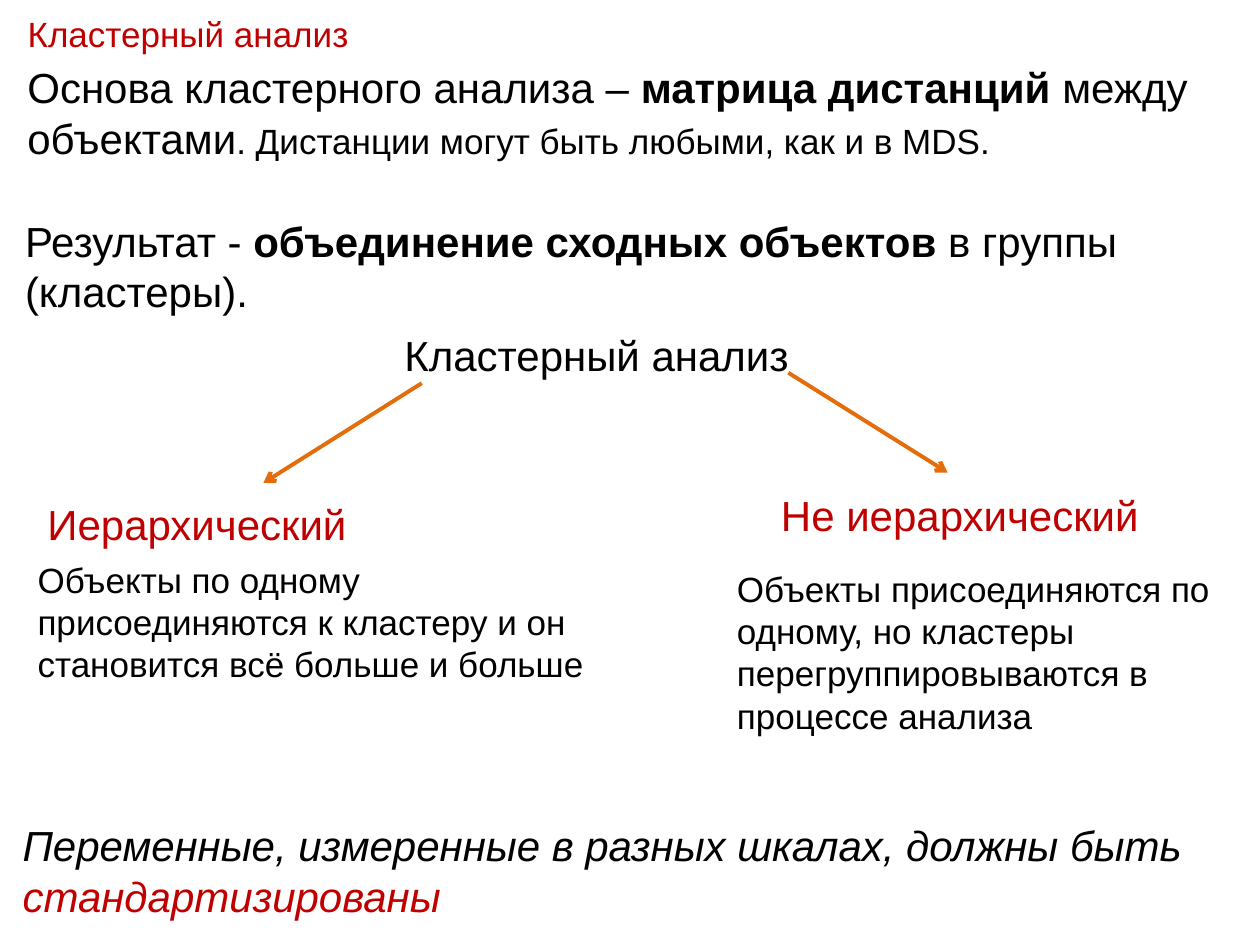
from dataclasses import dataclass

from lxml.etree import SubElement
from pptx import Presentation
from pptx.dml.color import RGBColor
from pptx.enum.shapes import MSO_CONNECTOR
from pptx.enum.text import MSO_ANCHOR, MSO_AUTO_SIZE, PP_ALIGN
from pptx.oxml.ns import qn
from pptx.util import Pt

INK = {"text": "000000", "accent": "C00000", "arrow": "E46C0A"}
FONT = "Arial"
BIG, SMALL = 24, 20


@dataclass
class Box:
    left: float
    top: float
    width: float
    height: float
    wrap: bool = True


@dataclass
class Arrow:
    start: tuple[float, float]
    end: tuple[float, float]


@dataclass
class Branch:
    name: str
    head: Box
    note: str
    body: Box
    arrow: Arrow


def add_run(para, text: str, *, size=BIG, color="text", bold=False, italic=False):
    run = para.add_run()
    run.text = text
    font = run.font
    font.name, font.size = FONT, Pt(size)
    font.bold, font.italic = bold, italic
    font.color.rgb = RGBColor.from_string(INK[color])


def set_frame(shape, box: Box):
    """Place a shape and return its first paragraph, ready for runs."""
    shape.left, shape.top = Pt(box.left), Pt(box.top)
    shape.width, shape.height = Pt(box.width), Pt(box.height)
    frame = shape.text_frame
    frame.word_wrap = box.wrap
    frame.auto_size = MSO_AUTO_SIZE.SHAPE_TO_FIT_TEXT
    frame.vertical_anchor = MSO_ANCHOR.TOP
    para = frame.paragraphs[0]
    para.alignment = PP_ALIGN.LEFT
    return para


def add_text(slide, box: Box):
    return set_frame(slide.shapes.add_textbox(0, 0, 0, 0), box)


def add_arrow(slide, arrow: Arrow) -> None:
    ends = [Pt(v) for v in arrow.start + arrow.end]
    link = slide.shapes.add_connector(MSO_CONNECTOR.STRAIGHT, *ends)
    link.line.width = Pt(2.25)
    link.line.color.rgb = RGBColor.from_string(INK["arrow"])
    SubElement(link.line._get_or_add_ln(), qn("a:tailEnd"), type="arrow")
    SubElement(link._element.spPr, qn("a:effectLst"))


BRANCHES = [
    Branch(
        "Иерархический",
        Box(20, 281.5, 194, 36, wrap=False),
        "Объекты по одному присоединяются к кластеру "
        "и он становится всё больше и больше",
        Box(14.4, 315.4, 343, 80),
        Arrow((241, 219), (150.5, 276)),
    ),
    Branch(
        "Не иерархический",
        Box(439.2, 276, 221, 36, wrap=False),
        "Объекты присоединяются по одному, но кластеры "
        "перегруппировываются в процессе анализа",
        Box(414, 321, 306, 104.4),
        Arrow((450.5, 213), (541.5, 270)),
    ),
]


def main() -> None:
    deck = Presentation()
    deck.slide_width, deck.slide_height = Pt(720), Pt(540)
    slide = deck.slides.add_slide(deck.slide_layouts[5])

    # Title
    para = set_frame(slide.shapes.title, Box(8.6, 3.6, 199, 31.5, wrap=False))
    add_run(para, "Кластерный анализ", size=SMALL, color="accent")

    # Basis and result
    para = add_text(slide, Box(8.6, 31.7, 695, 65.5))
    add_run(para, "Основа кластерного анализа – ")
    add_run(para, "матрица дистанций", bold=True)
    add_run(para, " между объектами")
    add_run(para, ". Дистанции могут быть любыми, как и в MDS.", size=SMALL)

    para = add_text(slide, Box(7.2, 119.5, 682, 65.5))
    add_run(para, "Результат - ")
    add_run(para, "объединение сходных объектов ", bold=True)
    add_run(para, "в группы (кластеры).")

    # Tree of methods
    add_run(add_text(slide, Box(224, 185, 236, 36, wrap=False)), "Кластерный анализ")
    for branch in BRANCHES:
        add_arrow(slide, branch.arrow)
        add_run(add_text(slide, branch.head), branch.name, color="accent")
        add_run(add_text(slide, branch.body), branch.note, size=SMALL)

    # Closing remark
    para = add_text(slide, Box(5.8, 465, 705.6, 65.5))
    add_run(para, "Переменные, измеренные в разных шкалах, должны быть ", italic=True)
    add_run(para, "стандартизированы", color="accent", italic=True)

    deck.save("out.pptx")


if __name__ == "__main__":
    main()
